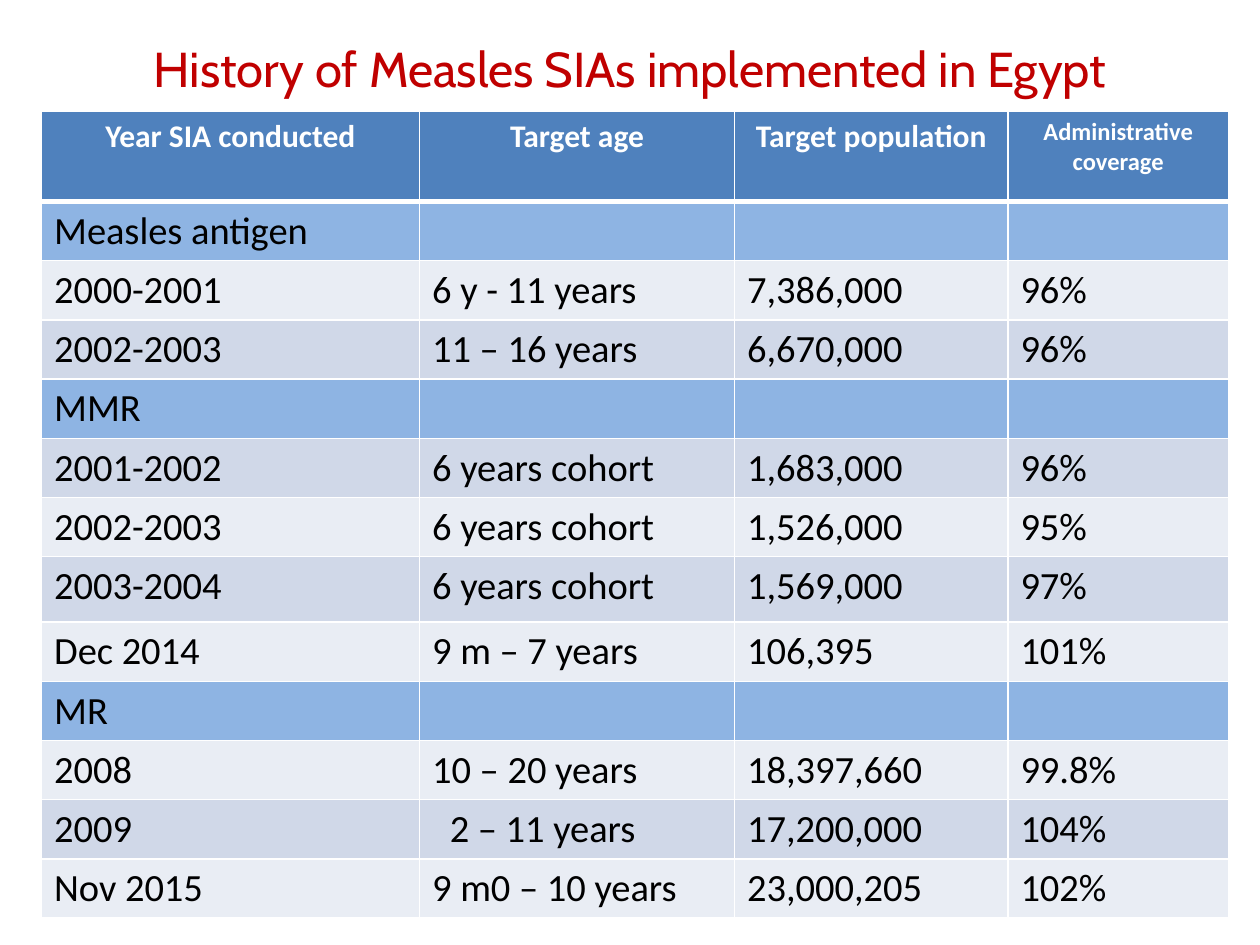
import pptx
import pptx.dml.color
import pptx.enum.text
import pptx.oxml
import pptx.oxml.ns
import pptx.util

COLORS = {
    "title": "C00000",
    "header": "4F81BD",
    "section": "8EB4E3",
    "odd": "D0D8E8",
    "even": "E9EDF4",
    "white": "FFFFFF",
    "text": "000000",
}
HEADERS = ["Year SIA conducted", "Target age", "Target population", "Administrative coverage"]
ROWS = [
    HEADERS,
    ["Measles antigen"],
    ["2000-2001", "6 y - 11 years", "7,386,000", "96%"],
    ["2002-2003", "11 – 16 years", "6,670,000", "96%"],
    ["MMR"],
    ["2001-2002", "6 years cohort", "1,683,000", "96%"],
    ["2002-2003", "6 years cohort", "1,526,000", "95%"],
    ["2003-2004", "6 years cohort", "1,569,000", "97%"],
    ["Dec 2014", "9 m – 7 years", "106,395", "101%"],
    ["MR"],
    ["2008", "10 – 20 years", "18,397,660", "99.8%"],
    ["2009", "2 – 11 years", "17,200,000", "104%"],
    ["Nov 2015", "9 m0 – 10 years", "23,000,205", "102%"],
]
COLUMN_WIDTHS = [3, 2.5, 2.17, 1.75]
ROW_HEIGHTS = [0.72] + [0.47] * 6 + [0.52] + [0.47] * 5


def style_font(font, name, size, color, bold=False):
    font.name = name
    font.size = pptx.util.Pt(size)
    font.bold = bold
    font.color.rgb = pptx.dml.color.RGBColor.from_string(COLORS[color])


def add_border(cell, side, points):
    cell._tc.get_or_add_tcPr().append(pptx.oxml.parse_xml(
        f'<a:{side} {pptx.oxml.ns.nsdecls("a")} w="{pptx.util.Pt(points)}">'
        f'<a:solidFill><a:srgbClr val="{COLORS["white"]}"/></a:solidFill></a:{side}>'))


presentation = pptx.Presentation()
presentation.slide_width = pptx.util.Inches(10)
presentation.slide_height = pptx.util.Inches(7.5)
slide = presentation.slides.add_slide(presentation.slide_layouts[6])
center = pptx.enum.text.PP_ALIGN.CENTER

# Title
title = slide.shapes.add_textbox(
    *(pptx.util.Inches(length) for length in (0.5, 0.23, 9, 0.62)))
title.text_frame.word_wrap = True
title.text_frame.vertical_anchor = pptx.enum.text.MSO_ANCHOR.MIDDLE
paragraph = title.text_frame.paragraphs[0]
paragraph.text = "History of Measles SIAs implemented in Egypt"
paragraph.alignment = center
style_font(paragraph.font, "Cabin", 28, "title")

# Table grid
table = slide.shapes.add_table(
    len(ROWS), len(HEADERS), pptx.util.Inches(0.33), pptx.util.Inches(0.88),
    pptx.util.Inches(sum(COLUMN_WIDTHS)), pptx.util.Inches(sum(ROW_HEIGHTS))).table
for column, width in zip(table.columns, COLUMN_WIDTHS):
    column.width = pptx.util.Inches(width)
for row, height in zip(table.rows, ROW_HEIGHTS):
    row.height = pptx.util.Inches(height)

# Cells: header, section rows with one label, and banded data rows
for row_index, texts in enumerate(ROWS):
    is_header = row_index == 0
    if is_header:
        fill = "header"
    elif len(texts) == 1:
        fill = "section"
    else:
        fill = "odd" if row_index % 2 else "even"
    for column_index in range(len(HEADERS)):
        cell = table.cell(row_index, column_index)
        add_border(cell, "lnL", 1)
        add_border(cell, "lnR", 1)
        add_border(cell, "lnT", 3 if row_index == 1 else 1)
        add_border(cell, "lnB", 3 if is_header else 1)
        cell.fill.solid()
        cell.fill.fore_color.rgb = pptx.dml.color.RGBColor.from_string(COLORS[fill])
        if column_index >= len(texts):
            continue
        paragraph = cell.text_frame.paragraphs[0]
        paragraph.text = texts[column_index]
        if is_header:
            paragraph.alignment = center
            size = 14 if column_index == len(HEADERS) - 1 else 18
            style_font(paragraph.font, "Calibri", size, "white", bold=True)
        else:
            style_font(paragraph.font, "Calibri", 22, "text")

# The age range for 2009 is indented
table.cell(11, 1).margin_left = pptx.util.Inches(0.24)

presentation.save("out.pptx")
